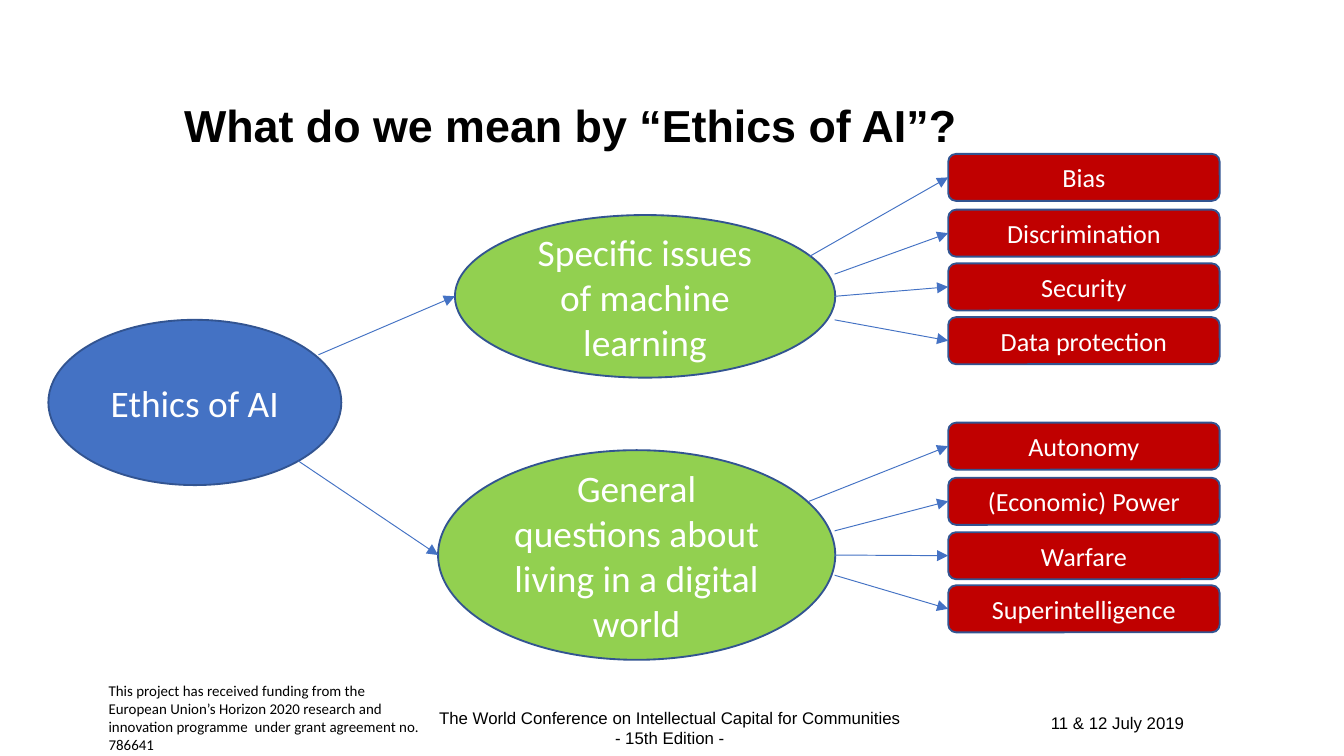
from dataclasses import dataclass

from lxml import etree
from pptx import Presentation
from pptx import util as u
from pptx.dml.color import RGBColor
from pptx.enum import shapes, text
from pptx.oxml.ns import qn

PX = 4572  # 200 px to the inch


@dataclass(frozen=True)
class Theme:
    black: str = "000000"
    white: str = "FFFFFF"
    blue: str = "4472C4"
    green: str = "92D050"
    red: str = "C00000"
    outline: str = "325491"
    heading_font: str = "Arial"
    body_font: str = "Calibri"
    title_size: int = 24
    node_size: int = 20
    issue_size: int = 14
    footer_size: int = 9
    funding_size: int = 8


theme = Theme()


def write(shape, words, font, size, color, align, bold=False):
    frame = shape.text_frame
    frame.text = words
    for paragraph in frame.paragraphs:
        paragraph.alignment = align
        for run in paragraph.runs:
            run.font.name = font
            run.font.size = u.Pt(size)
            run.font.bold = bold
            run.font.color.rgb = RGBColor.from_string(color)


def add_node(kind, box, words, fill, size):
    shape = slide.shapes.add_shape(kind, *(value * PX for value in box))
    shape.shadow.inherit = False
    shape.fill.solid()
    shape.fill.fore_color.rgb = RGBColor.from_string(fill)
    shape.line.color.rgb = RGBColor.from_string(theme.outline)
    shape.line.width = u.Pt(1)
    shape.text_frame.word_wrap = True
    shape.text_frame.vertical_anchor = text.MSO_ANCHOR.MIDDLE
    write(shape, words, theme.body_font, size, theme.white, text.PP_ALIGN.CENTER)
    return shape


presentation = Presentation()
presentation.slide_width = 2000 * PX
presentation.slide_height = 1125 * PX
slide = presentation.slides.add_slide(presentation.slide_layouts[5])

# Title
title = slide.shapes.title
title.left, title.top, title.width, title.height = (
    value * PX for value in (254, 82, 1610, 218))
title.text_frame.auto_size = text.MSO_AUTO_SIZE.NONE
title.text_frame.vertical_anchor = text.MSO_ANCHOR.MIDDLE
write(title, "What do we mean by “Ethics of AI”?", theme.heading_font,
      theme.title_size, theme.black, text.PP_ALIGN.LEFT, bold=True)
title.text_frame.paragraphs[0].line_spacing = 0.9

# Footer: date, conference, funding note
footers = [
    ((1544, 1051, 242, 50), "11 & 12 July 2019", theme.heading_font,
     theme.footer_size, text.PP_ALIGN.LEFT, False),
    ((630, 1043, 740, 80),
     "The World Conference on Intellectual Capital for Communities \v- 15th Edition - ",
     theme.heading_font, theme.footer_size, text.PP_ALIGN.CENTER, False),
    ((142, 1005, 526, 90),
     "This project has received funding from the\n"
     "European Union’s Horizon 2020 research and innovation programme  "
     "under grant agreement no. 786641",
     theme.body_font, theme.funding_size, text.PP_ALIGN.LEFT, True),
]
for box, words, font, size, align, wrap in footers:
    footer = slide.shapes.add_textbox(*(value * PX for value in box))
    footer.text_frame.word_wrap = wrap
    write(footer, words, font, size, theme.black, align)

# Root topic
add_node(shapes.MSO_SHAPE.OVAL, (72, 476, 436, 246), "Ethics of AI",
         theme.blue, theme.node_size)

# Branches: oval, arrow from the root, issues as (label, top, arrow start)
branches = [
    ((677, 320, 566, 242), "Specific issues of machine learning",
     ((474, 528), (677, 441)),
     [("Bias", 229, (1204, 382)), ("Discrimination", 312, (1242, 408)),
      ("Security", 392, (1242, 441)), ("Data protection", 472, (1242, 476))]),
    ((652, 670, 591, 312), "General questions about living in a digital world",
     ((444, 686), (652, 826)),
     [("Autonomy", 629, (1204, 746)), ("(Economic) Power", 711, (1242, 790)),
      ("Warfare", 792, (1242, 826)), ("Superintelligence", 871, (1242, 856))]),
]
arrows = []  # start, end, issue box to join or None
for box, words, (start, end), issues in branches:
    add_node(shapes.MSO_SHAPE.OVAL, box, words, theme.green, theme.node_size)
    arrows.append((start, end, None))
    for label, top, issue_start in issues:
        issue = add_node(shapes.MSO_SHAPE.ROUNDED_RECTANGLE, (1411, top, 404, 70),
                         label, theme.red, theme.issue_size)
        arrows.append((issue_start, (1411, top + 35), issue))

# Arrows
for start, end, issue in arrows:
    arrow = slide.shapes.add_connector(
        shapes.MSO_CONNECTOR.STRAIGHT, *(value * PX for value in start + end))
    if issue is not None:
        arrow.end_connect(issue, 1)
    arrow.line.color.rgb = RGBColor.from_string(theme.blue)
    arrow.line.width = u.Pt(0.5)
    etree.SubElement(arrow.line._get_or_add_ln(), qn("a:tailEnd"), type="triangle")
    etree.SubElement(arrow._element.spPr, qn("a:effectLst"))

presentation.save("out.pptx")
